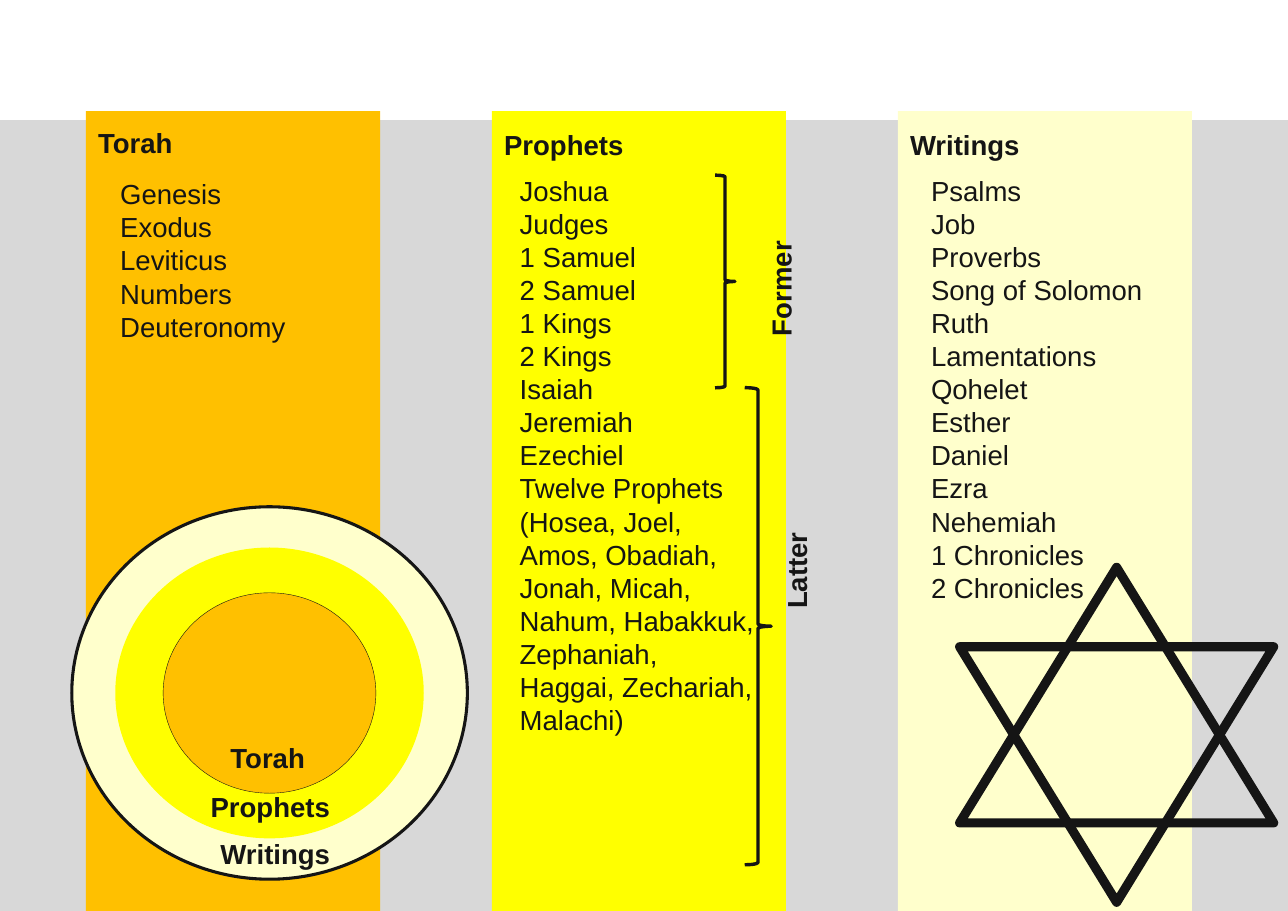
import pptx
import pptx.dml.color
import pptx.enum.shapes
import pptx.enum.text
import pptx.util

Pt = pptx.util.Pt
RGBColor = pptx.dml.color.RGBColor
MSO_SHAPE = pptx.enum.shapes.MSO_SHAPE
PP_ALIGN = pptx.enum.text.PP_ALIGN

INK = RGBColor(0x15, 0x15, 0x15)
GREY = RGBColor(0xD8, 0xD8, 0xD8)
ORANGE = RGBColor(0xFF, 0xC0, 0x00)
YELLOW = RGBColor(0xFF, 0xFF, 0x00)
CREAM = RGBColor(0xFF, 0xFF, 0xCC)

WIDTH, HEIGHT = 841.7, 595.4
COLUMN_LEFT, COLUMN_TOP, COLUMN_WIDTH, COLUMN_PITCH = 56.2, 72.7, 192.2, 265.3
LABEL_HEIGHT = 30.2
LABEL_WIDTHS = {"Torah": 65.5, "Prophets": 95, "Writings": 89.3}
INSETS = {"margin_left": Pt(7.9), "margin_right": Pt(7.9),
          "margin_top": Pt(4.3), "margin_bottom": Pt(4.3)}

# Title, colour, heading drop, list indent, list drop, list width, books
COLUMNS = [
    ("Torah", ORANGE, 5, 14.4, 38.9, 165,
     ["Genesis", "Exodus", "Leviticus", "Numbers", "Deuteronomy"]),
    ("Prophets", YELLOW, 6.5, 10.2, 36.7, 169.2,
     ["Joshua", "Judges", "1 Samuel", "2 Samuel", "1 Kings", "2 Kings",
      "Isaiah", "Jeremiah", "Ezechiel", "Twelve Prophets", "(Hosea, Joel,",
      "Amos, Obadiah, Jonah, Micah, Nahum, Habakkuk, Zephaniah, "
      "Haggai, Zechariah, Malachi)"]),
    ("Writings", CREAM, 6.5, 13.7, 36.7, 165,
     ["Psalms", "Job", "Proverbs", "Song of Solomon", "Ruth", "Lamentations",
      "Qohelet", "Esther", "Daniel", "Ezra", "Nehemiah", "1 Chronicles",
      "2 Chronicles"]),
]

# Title, colour, ring width and height, line width, label left and top
RINGS = [
    ("Writings", CREAM, 258.5, 243.4, 2, 89.3, 211.7),
    ("Prophets", YELLOW, 201.6, 190.1, 0, 82.8, 180.7),
    ("Torah", ORANGE, 139, 131, 0.25, 95.8, 149),
]


def add_shape(s, kind, left, top, width, height, fill=None, line=0):
    sp = s.shapes.add_shape(kind, Pt(left), Pt(top), Pt(width), Pt(height))
    sp.shadow.inherit = False
    if fill is None:
        sp.fill.background()
    else:
        sp.fill.solid()
        sp.fill.fore_color.rgb = fill
    if line:
        sp.line.color.rgb = INK
        sp.line.width = Pt(line)
    else:
        sp.line.fill.background()
    return sp


def add_text(s, lines, left, top, width, height=LABEL_HEIGHT, bold=True,
             wrap=False, align=PP_ALIGN.LEFT):
    sp = s.shapes.add_textbox(Pt(left), Pt(top), Pt(width), Pt(height))
    tf = sp.text_frame
    for name, value in {**INSETS, "word_wrap": wrap}.items():
        setattr(tf, name, value)
    for i, line in enumerate(lines):
        p = tf.add_paragraph() if i else tf.paragraphs[0]
        p.alignment = align
        r = p.add_run()
        r.text = line
        for name, value in {"name": "Arial", "size": Pt(18), "bold": bold}.items():
            setattr(r.font, name, value)
        r.font.color.rgb = INK
    return sp


def add_column(s, left, top, column):
    title, fill, title_drop, indent, list_drop, list_width, books = column
    add_shape(s, MSO_SHAPE.RECTANGLE, left, top, COLUMN_WIDTH, HEIGHT - top, fill)
    add_text(s, [title], left, top + title_drop, LABEL_WIDTHS[title])
    add_text(s, books, left + indent, top + list_drop, list_width,
             height=HEIGHT - top - list_drop, bold=False, wrap=True)


def add_rings(s, left, top):
    """Draw the three concentric ovals, each with its label near the bottom."""
    _, _, outer_width, outer_height, *_ = RINGS[0]
    for title, fill, width, height, line, label_left, label_top in RINGS:
        add_shape(s, MSO_SHAPE.OVAL, left + (outer_width - width) / 2,
                  top + (outer_height - height) / 2, width, height, fill, line)
        add_text(s, [title], left + label_left, top + label_top, LABEL_WIDTHS[title])


def add_star(s, left, top, width, height):
    side_height = 167
    for y, rotation in ((top, 0), (top + height - side_height, 180)):
        sp = add_shape(s, MSO_SHAPE.ISOSCELES_TRIANGLE, left, y, width,
                       side_height, line=6)
        sp.rotation = rotation


def add_brace(s, left, top, width, height, title, label_left, label_top):
    """Draw a brace with an upright label, offset from the brace's corner."""
    add_shape(s, MSO_SHAPE.RIGHT_BRACE, left, top, width, height, line=2.25)
    sp = add_text(s, [title], left + label_left, top + label_top, 87.1,
                  wrap=True, align=PP_ALIGN.CENTER)
    sp.rotation = 270


def main():
    prs = pptx.Presentation()
    prs.slide_width, prs.slide_height = Pt(WIDTH), Pt(HEIGHT)
    s = prs.slides.add_slide(prs.slide_layouts[6])
    add_shape(s, MSO_SHAPE.RECTANGLE, 0, 78.5, WIDTH, HEIGHT - 78.5, GREY)
    for i, column in enumerate(COLUMNS):
        add_column(s, COLUMN_LEFT + i * COLUMN_PITCH, COLUMN_TOP, column)
    add_rings(s, 46.9, 331.2)
    add_star(s, 627.1, 370.8, 205.2, 218.9)
    add_brace(s, 467.3, 114.5, 13, 139, "Former", -0.7, 59)
    add_brace(s, 486.7, 253.4, 17.3, 311.8, "Latter", -10, 104.4)
    prs.save("out.pptx")


if __name__ == "__main__":
    main()
